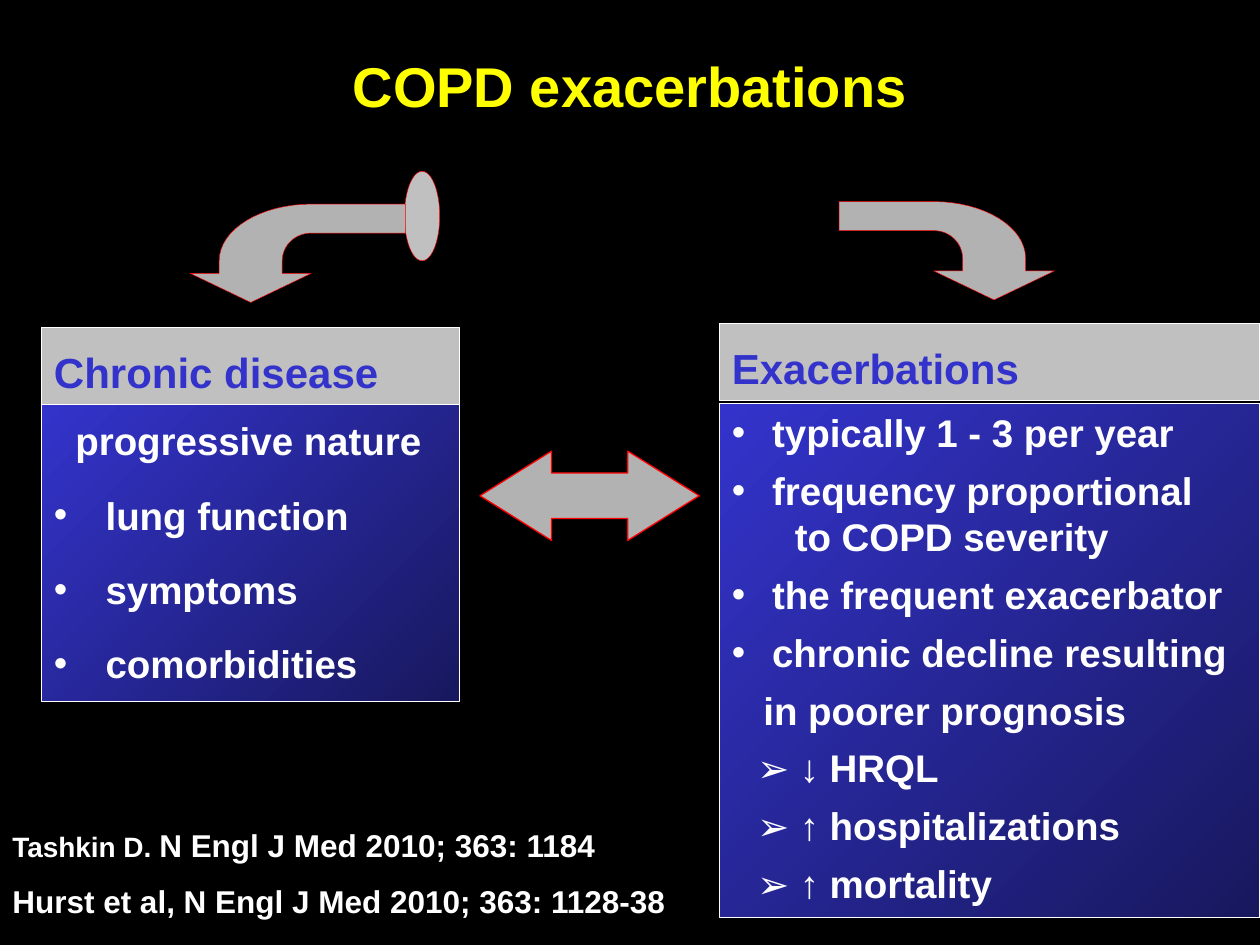
from lxml import etree
from pptx import Presentation
from pptx.dml.color import RGBColor
from pptx.enum.shapes import MSO_SHAPE
from pptx.enum.text import MSO_ANCHOR, PP_ALIGN
from pptx.oxml.ns import qn
from pptx.util import Inches, Pt

RECT, OVAL, DOUBLE_ARROW = MSO_SHAPE.RECTANGLE, MSO_SHAPE.OVAL, MSO_SHAPE.LEFT_RIGHT_ARROW
TOP = MSO_ANCHOR.TOP
LEFT, CENTER = PP_ALIGN.LEFT, PP_ALIGN.CENTER
BLACK = RGBColor(0x00, 0x00, 0x00)
WHITE = RGBColor(0xFF, 0xFF, 0xFF)
YELLOW = RGBColor(0xFF, 0xFF, 0x00)
RED = RGBColor(0xFF, 0x00, 0x00)
SILVER = RGBColor(0xC0, 0xC0, 0xC0)
GRAY = RGBColor(0xB2, 0xB2, 0xB2)
BLUE = RGBColor(0x33, 0x33, 0xCC)
NAVY = RGBColor(0x18, 0x18, 0x5E)


def bezier(p0, p1, p2, p3, steps=16):
    points = []
    for i in range(1, steps + 1):
        t = i / steps
        weights = ((1 - t) ** 3, 3 * t * (1 - t) ** 2, 3 * t * t * (1 - t), t ** 3)
        points.append(tuple(sum(w * q[k] for w, q in zip(weights, (p0, p1, p2, p3)))
                            for k in (0, 1)))
    return points


BENT_ARROW = [
    (0, 0), (0.48, -0.23), (0.25, -0.23), (0.25, -0.33),
    *bezier((0.25, -0.33), (0.25, -0.58), (-0.08, -0.78), (-0.48, -0.78)),
    (-1.23, -0.78), (-1.23, -0.55), (-0.48, -0.55),
    *bezier((-0.48, -0.55), (-0.35, -0.55), (-0.25, -0.45), (-0.25, -0.33)),
    (-0.25, -0.23), (-0.48, -0.23),
]


class Deck:
    """Slide style and the element builders that use it."""

    font = "Arial"

    def __init__(self, width, height):
        self.prs = Presentation()
        self.prs.slide_width, self.prs.slide_height = Inches(width), Inches(height)
        self.s = self.prs.slides.add_slide(self.prs.slide_layouts[6])
        self.s.background.fill.solid()
        self.s.background.fill.fore_color.rgb = BLACK

    def finish(self, sp, fill, line, weight):
        sp.shadow.inherit = False
        if isinstance(fill, RGBColor):
            sp.fill.solid()
            sp.fill.fore_color.rgb = fill
        else:
            sp.fill.gradient()
            sp.fill.gradient_angle = 315
            for stop, color, position in zip(sp.fill.gradient_stops, fill, (0, 1)):
                stop.color.rgb, stop.position = color, position
        sp.line.color.rgb = line
        sp.line.width = Pt(weight)
        return sp

    def shape(self, kind, box, fill, line, weight=0.75):
        sp = self.s.shapes.add_shape(kind, *map(Inches, box))
        return self.finish(sp, fill, line, weight)

    def bent_arrow(self, x, y, side):
        points = [(Inches(x + side * dx), Inches(y + dy)) for dx, dy in BENT_ARROW]
        builder = self.s.shapes.build_freeform(*points[0], scale=1.0)
        builder.add_line_segments(points[1:], close=True)
        return self.finish(builder.convert_to_shape(), GRAY, RED, 0.25)

    def text_box(self, box, paras, **style):
        self.add_text(self.s.shapes.add_textbox(*map(Inches, box)), paras, **style)

    def panel(self, box, fill, paras, **style):
        self.add_text(self.shape(RECT, box, fill, WHITE), paras, **style)

    def add_text(self, sp, paras, size, color=WHITE, align=LEFT, spacing=1.0, before=0, wrap=True):
        tf = sp.text_frame
        tf.word_wrap, tf.vertical_anchor = wrap, TOP
        for i, (runs, margin, bullet) in enumerate(paras):
            p = tf.paragraphs[0] if i == 0 else tf.add_paragraph()
            layout = {"alignment": align, "line_spacing": spacing,
                      "space_before": Pt(before if i else 0)}
            for name, value in layout.items():
                setattr(p, name, value)
            self.indent(p, margin, bullet)
            for text, run_size in runs:
                for n, part in enumerate(text.split("\n")):
                    if n:
                        p.add_line_break()
                    r = p.add_run()
                    r.text = part
                    fmt = {"name": self.font, "size": Pt(run_size or size), "bold": True}
                    for name, value in fmt.items():
                        setattr(r.font, name, value)
                    r.font.color.rgb = color

    def indent(self, p, margin, bullet):
        pPr = p._p.get_or_add_pPr()
        pPr.set("marL", str(Inches(margin)))
        pPr.set("indent", str(-Inches(margin) if bullet else 0))
        if bullet:
            etree.SubElement(pPr, qn("a:buFont")).set("typeface", self.font)
            etree.SubElement(pPr, qn("a:buChar")).set("char", "•")
        else:
            etree.SubElement(pPr, qn("a:buNone"))


def para(text, margin=0, bullet=False):
    return [(text, None)], margin, bullet


def main():
    deck = Deck(10, 7.5)
    deck.shape(OVAL, (3.21, 1.36, 0.28, 0.71), SILVER, RED, 0.25)
    deck.bent_arrow(7.89, 2.38, 1)
    deck.bent_arrow(1.99, 2.4, -1)

    heading = {"size": 24, "color": BLUE, "spacing": 1.25}
    deck.panel((0.33, 2.6, 3.32, 0.61), SILVER, [para("Chronic disease")], **heading)
    deck.panel((5.71, 2.57, 4.29, 0.61), SILVER, [para("Exacerbations")], **heading)

    disease = [para("progressive nature", 0.17)]
    disease += [para(text, 0.41, True) for text in ("lung function", "symptoms", "comorbidities")]
    deck.panel((0.33, 3.21, 3.32, 2.36), (BLUE, NAVY), disease,
               size=22, spacing=1.15, before=12)

    effects = [para(text, 0.32, True) for text in (
        "typically 1 - 3 per year", "frequency proportional\n\tto COPD severity",
        "the frequent exacerbator", "chronic decline resulting")]
    effects.append(para("in poorer prognosis", 0.25))
    effects += [para(text, 0.2) for text in ("➢ ↓ HRQL", "➢ ↑ hospitalizations", "➢ ↑ mortality")]
    deck.panel((5.71, 3.2, 4.29, 4.08), (BLUE, NAVY), effects, size=22, before=6.6)

    arrow = deck.shape(DOUBLE_ARROW, (3.81, 3.58, 1.74, 0.71), GRAY, RED)
    arrow.adjustments[0], arrow.adjustments[1] = 0.51, 0.8

    references = [
        ([("Tashkin D. ", 16), ("N Engl J Med 2010; 363: 1184", None)], 0, False),
        para("Hurst et al, N Engl J Med 2010; 363: 1128-38"),
    ]
    deck.text_box((0, 6.51, 5.63, 0.86), references, size=18, before=10)
    deck.text_box((2.68, 0.36, 4.64, 0.64), [para("COPD exacerbations")],
                  wrap=False, size=32, color=YELLOW, align=CENTER)
    deck.prs.save("out.pptx")


if __name__ == "__main__":
    main()
